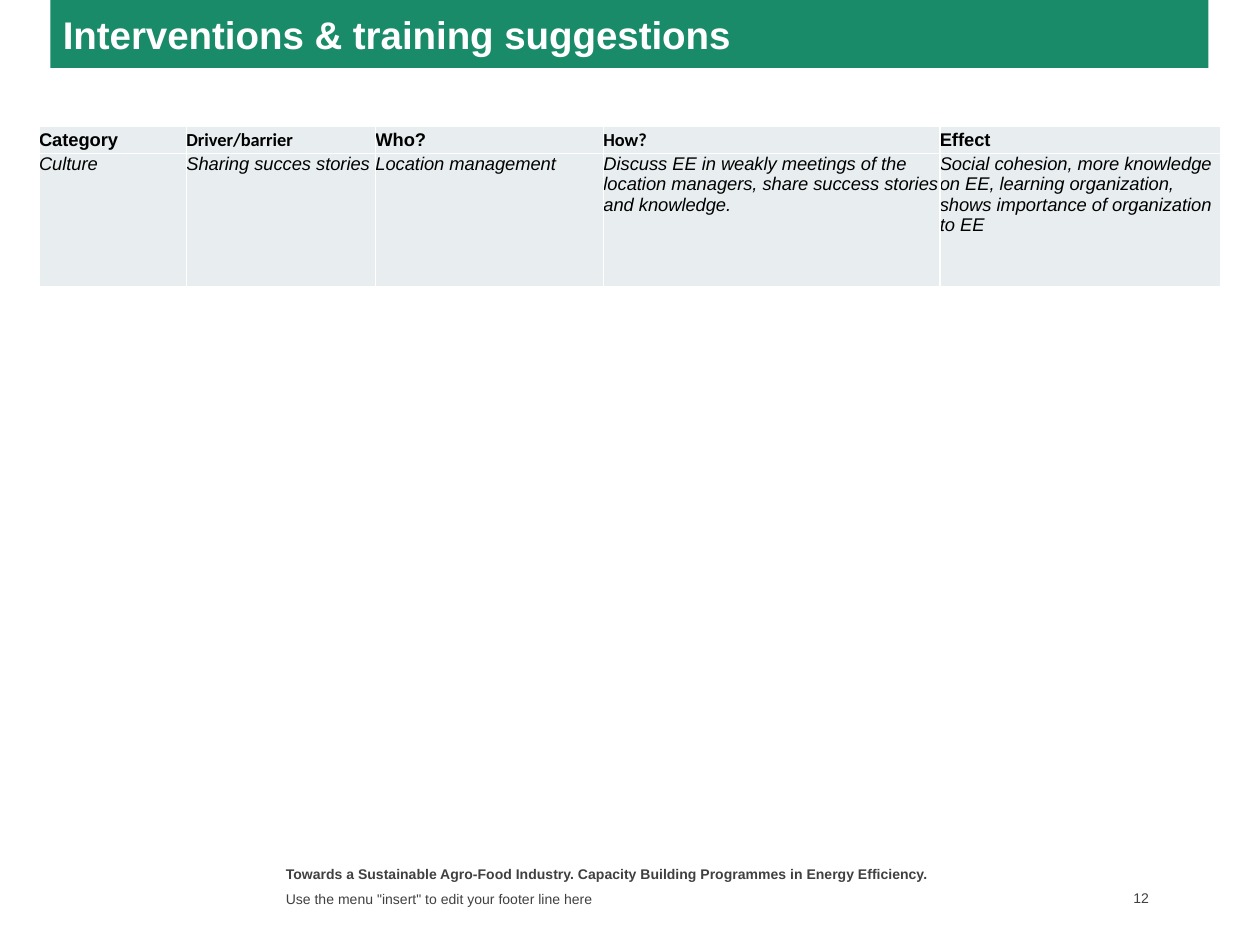
from dataclasses import dataclass

from lxml import etree
from pptx import Presentation
from pptx.dml.color import RGBColor
from pptx.enum.shapes import MSO_SHAPE
from pptx.enum.text import MSO_ANCHOR, PP_ALIGN
from pptx.oxml.ns import qn
from pptx.util import Inches, Pt

RECTANGLE = MSO_SHAPE.RECTANGLE
TOP, MIDDLE = MSO_ANCHOR.TOP, MSO_ANCHOR.MIDDLE
LEFT, RIGHT = PP_ALIGN.LEFT, PP_ALIGN.RIGHT

SLIDE_WIDTH, SLIDE_HEIGHT = Inches(10), Inches(7.5)
GREEN, WHITE, BLACK = "1A8B69", "FFFFFF", "000000"
DARK_GREY, PALE_GREY = "404040", "E8EEEF"
ROW_HEIGHTS = (0.22, 1.06)
BORDER_SIDES = ("a:lnL", "a:lnR", "a:lnT", "a:lnB")


@dataclass
class TextStyle:
    size: float
    color: str
    font: str = "Arial"
    bold: bool = False
    italic: bool = False


@dataclass
class FooterItem:
    text: str
    left: float
    top: float
    width: float
    height: float
    bold: bool = False
    anchor: MSO_ANCHOR = MIDDLE
    align: PP_ALIGN = LEFT
    right_inset: float = 0.1


@dataclass
class Column:
    heading: str
    entry: str
    width: float
    heading_font: str = "Arial"


FOOTER = [
    FooterItem(
        "Towards a Sustainable Agro-Food Industry. "
        "Capacity Building Programmes in Energy Efficiency.",
        0.217, 0.909, 0.55, 0.028, bold=True, anchor=TOP,
    ),
    FooterItem('Use the menu "insert" to edit your footer line here',
               0.217, 0.939, 0.55, 0.025),
    FooterItem("12", 0.86, 0.937, 0.056, 0.027, align=RIGHT, right_inset=0.04),
]

COLUMNS = [
    Column("Category", "Culture", 1.17),
    Column("Driver/barrier", "Sharing succes stories", 1.5, "Calibri"),
    Column("Who?", "Location management", 1.81),
    Column("How?", "Discuss EE in weakly meetings of the location managers, "
           "share success stories and knowledge.", 2.67, "Calibri"),
    Column("Effect", "Social cohesion, more knowledge on EE, learning organization, "
           "shows importance of organization to EE", 2.23),
]


def rgb(color: str) -> RGBColor:
    return RGBColor.from_string(color)


def share_box(left: float, top: float, width: float, height: float) -> tuple:
    return (int(left * SLIDE_WIDTH), int(top * SLIDE_HEIGHT),
            int(width * SLIDE_WIDTH), int(height * SLIDE_HEIGHT))


def write(frame, text: str, style: TextStyle, align: PP_ALIGN = LEFT) -> None:
    frame.text = text
    frame.word_wrap = True
    paragraph = frame.paragraphs[0]
    paragraph.alignment = align
    for run in paragraph.runs:
        font = run.font
        font.name, font.size = style.font, Pt(style.size)
        font.bold, font.italic = style.bold, style.italic
        font.color.rgb = rgb(style.color)


def add_title(slide, text: str) -> None:
    banner = slide.shapes.add_shape(RECTANGLE, *share_box(0.04, 0, 0.919, 0.072))
    banner.shadow.inherit = False
    banner.fill.solid()
    banner.fill.fore_color.rgb = rgb(GREEN)
    banner.line.fill.background()
    banner.text_frame.vertical_anchor = MIDDLE
    write(banner.text_frame, text, TextStyle(22, WHITE, bold=True))


def add_footer_item(slide, item: FooterItem) -> None:
    box = slide.shapes.add_textbox(
        *share_box(item.left, item.top, item.width, item.height))
    frame = box.text_frame
    frame.vertical_anchor = item.anchor
    frame.margin_right = Inches(item.right_inset)
    write(frame, item.text, TextStyle(8, DARK_GREY, bold=item.bold), item.align)


def add_borders(cell, color: str, width: float) -> None:
    properties = cell._tc.get_or_add_tcPr()
    for position, side in enumerate(BORDER_SIDES):
        line = etree.Element(qn(side), w=str(Pt(width)))
        fill = etree.SubElement(line, qn("a:solidFill"))
        etree.SubElement(fill, qn("a:srgbClr"), val=color)
        properties.insert(position, line)


def fill_cell(cell, text: str, style: TextStyle, anchor: MSO_ANCHOR) -> None:
    cell.margin_left = cell.margin_right = cell.margin_top = cell.margin_bottom = 0
    cell.vertical_anchor = anchor
    cell.fill.solid()
    cell.fill.fore_color.rgb = rgb(PALE_GREY)
    write(cell.text_frame, text, style)
    add_borders(cell, WHITE, 1)


def add_interventions(slide, columns: list[Column]) -> None:
    table = slide.shapes.add_table(
        len(ROW_HEIGHTS), len(columns), Inches(0.31), Inches(1),
        Inches(sum(column.width for column in columns)), Inches(sum(ROW_HEIGHTS)),
    ).table
    table.horz_banding = False
    for row, height in zip(table.rows, ROW_HEIGHTS):
        row.height = Inches(height)
    for index, column in enumerate(columns):
        table.columns[index].width = Inches(column.width)
        fill_cell(table.cell(0, index), column.heading,
                  TextStyle(10.5, BLACK, column.heading_font, bold=True), MIDDLE)
        fill_cell(table.cell(1, index), column.entry,
                  TextStyle(10.5, BLACK, italic=True), TOP)


def main() -> None:
    presentation = Presentation()
    presentation.slide_width, presentation.slide_height = SLIDE_WIDTH, SLIDE_HEIGHT
    slide = presentation.slides.add_slide(presentation.slide_layouts[6])
    add_title(slide, "Interventions & training suggestions")
    for item in FOOTER:
        add_footer_item(slide, item)
    add_interventions(slide, COLUMNS)
    presentation.save("out.pptx")


if __name__ == "__main__":
    main()
